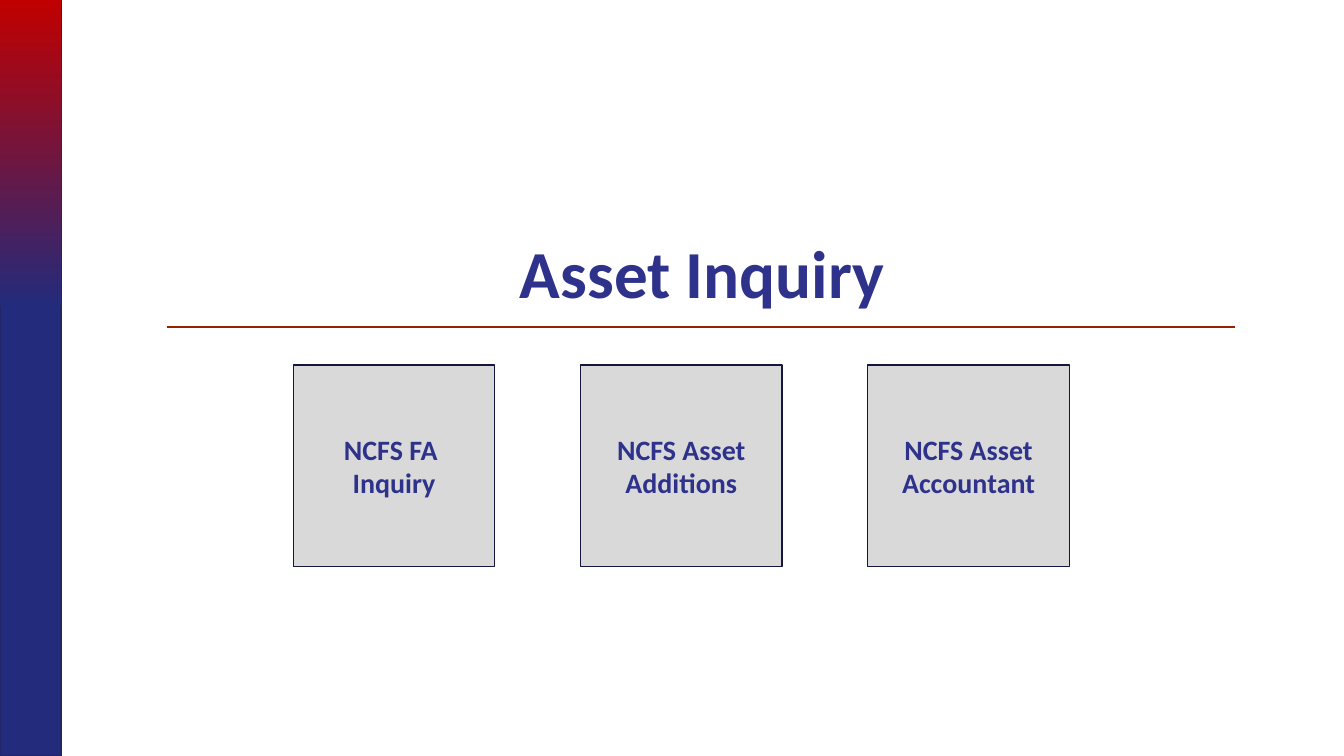
from pptx import Presentation
from pptx import util as u
from pptx.dml import color
from pptx.enum import shapes, text
from pptx.oxml.ns import qn
from lxml import etree

HUES = {"navy": "232B7C", "edge": "222567", "red": "C00000", "rust": "972200",
        "ink": "2E328B", "grey": "D9D9D9", "dark": "14163D"}


def rgb(name):
    return color.RGBColor.from_string(HUES[name])


def write(shape, words, size, anchor, lead=1.0):
    frame = shape.text_frame
    frame.word_wrap = True
    frame.auto_size = text.MSO_AUTO_SIZE.NONE
    frame.vertical_anchor = anchor
    frame.text = words
    for para in frame.paragraphs:
        para.alignment = text.PP_ALIGN.CENTER
        para.line_spacing = lead
        for run in para.runs:
            run.font.name = "Calibri"
            run.font.size = u.Pt(size)
            run.font.bold = True
            run.font.color.rgb = rgb("ink")


deck = Presentation()
deck.slide_width, deck.slide_height = u.Cm(33.87), u.Cm(19.05)
slide = deck.slides.add_slide(deck.slide_layouts[5])
items = slide.shapes
RECT = shapes.MSO_SHAPE.RECTANGLE

band = items.add_shape(RECT, 0, 0, u.Cm(1.54), u.Cm(19.05))
band.shadow.inherit = False
band.fill.solid()
band.fill.fore_color.rgb = rgb("navy")
band.line.color.rgb = rgb("edge")
band.line.width = u.Pt(1)

fade = items.add_shape(RECT, 0, 0, u.Cm(1.54), u.Cm(7.72))
fade.shadow.inherit = False
fade.fill.gradient()
fade.fill.gradient_angle = 270
for stop, hue, place in zip(fade.fill.gradient_stops, ("red", "navy"), (0, 1)):
    stop.color.rgb = rgb(hue)
    stop.position = place
fade.line.fill.background()

rule = items.add_connector(shapes.MSO_CONNECTOR.STRAIGHT,
                           u.Cm(4.2), u.Cm(8.23), u.Cm(31.12), u.Cm(8.23))
rule.line.color.rgb = rgb("rust")
rule.line.width = u.Pt(1.5)
etree.SubElement(rule._element.spPr, qn("a:effectLst"))

title = items.title
title.left, title.top = u.Cm(4.24), u.Cm(4.45)
title.width, title.height = u.Cm(26.92), u.Cm(3.56)
write(title, "Asset Inquiry", size=48, anchor=text.MSO_ANCHOR.BOTTOM, lead=0.9)

names = ["NCFS FA \nInquiry", "NCFS Asset Additions", "NCFS Asset Accountant"]
for col, name in enumerate(names):
    tile = items.add_shape(RECT, u.Cm(7.39 + 7.24 * col), u.Cm(9.2), u.Cm(5.08), u.Cm(5.08))
    tile.shadow.inherit = False
    tile.fill.solid()
    tile.fill.fore_color.rgb = rgb("grey")
    tile.line.color.rgb = rgb("dark")
    tile.line.width = u.Pt(1)
    write(tile, name, size=20, anchor=text.MSO_ANCHOR.MIDDLE)

deck.save("out.pptx")
